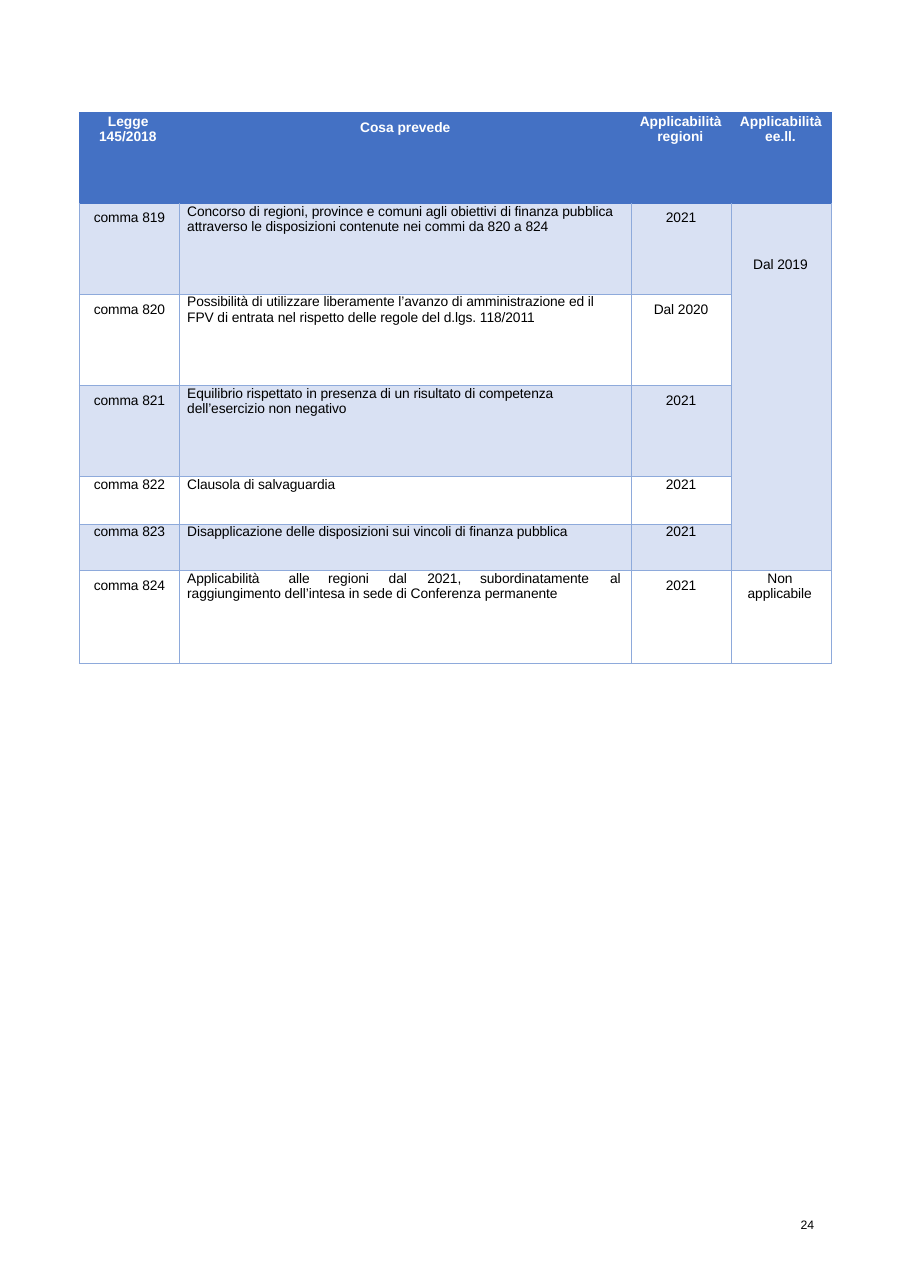
"""Build the page with the table on the applicability of Law 145/2018."""
import pptx
import pptx.dml.color
import pptx.enum.text
import pptx.oxml
import pptx.oxml.ns
import pptx.util
from lxml import etree

Inches = pptx.util.Inches
Pt = pptx.util.Pt
RGBColor = pptx.dml.color.RGBColor
ALIGN = pptx.enum.text.PP_ALIGN
qn = pptx.oxml.ns.qn

BLUE = RGBColor(0x44, 0x71, 0xC4)
PALE = RGBColor(0xD9, 0xE1, 0xF3)
RULE = RGBColor(0x8E, 0xAA, 0xDB)
WHITE = RGBColor(255, 255, 255)
BLACK = RGBColor(0, 0, 0)

COLS = [0.91, 4.1, 0.91, 0.91]
ROW_HEIGHTS = [0.83, 0.82, 0.83, 0.83, 0.43, 0.42, 0.84]
TABS = [0.92, 1.28, 1.83, 2.18, 2.66, 3.84]
HEADERS = [
    ("Legge 145/2018", 0.01, (0.18, 0.08)),
    ("Cosa prevede", 0.07, None),
    ("Applicabilità regioni", 0.01, (0.24, -0.16)),
    ("Applicabilità ee.ll.", 0.01, (0.31, -0.23)),
]
COMMI = [
    ("comma 819", "Concorso di regioni, province e comuni agli obiettivi di finanza pubblica "
     "attraverso le disposizioni contenute nei commi da 820 a 824", "2021", 0.06),
    ("comma 820", "Possibilità di utilizzare liberamente l’avanzo di amministrazione ed il\n"
     "FPV di entrata nel rispetto delle regole del d.lgs. 118/2011", "Dal 2020", 0.07),
    ("comma 821", "Equilibrio rispettato in presenza di un risultato di competenza\n"
     "dell’esercizio non negativo", "2021", 0.07),
    ("comma 822", "Clausola di salvaguardia", "2021", 0),
    ("comma 823", "Disapplicazione delle disposizioni sui vincoli di finanza pubblica", "2021", 0),
    ("comma 824", "Applicabilità\talle\tregioni\tdal\t2021,\tsubordinatamente\tal\n"
     "raggiungimento dell’intesa in sede di Conferenza permanente", "2021", 0.07),
]


class Page:
    def __init__(self, slide, font):
        self.slide = slide
        self.font = font

    def format(self, p, size, color, bold=False, indent=None, spacing=0):
        pPr = p._p.get_or_add_pPr()
        if "\t" in p.text:
            tabs = etree.SubElement(pPr, qn("a:tabLst"))
            for x in TABS:
                etree.SubElement(tabs, qn("a:tab"), pos=str(Inches(x)), algn="l")
        if indent:
            left, first = indent
            p.alignment = ALIGN.LEFT
            p.line_spacing = Pt(10.2)
            pPr.set("marL", str(Inches(left)))
            if first:
                pPr.set("indent", str(Inches(first)))
        else:
            p.alignment = ALIGN.CENTER
        for r in p.runs:
            r.font.name = self.font
            r.font.size = Pt(size)
            r.font.bold = bold
            r.font.color.rgb = color
            r._r.get_or_add_rPr().set("spc", str(spacing))

    def table(self, left, top, cols, heights):
        s = self.slide.shapes.add_table(len(heights), len(cols), Inches(left), Inches(top),
                                        Inches(sum(cols)), Inches(sum(heights)))
        for col, width in zip(s.table.columns, cols):
            col.width = Inches(width)
        for row, height in zip(s.table.rows, heights):
            row.height = Inches(height)
        return s.table

    def paint(self, cell, fill, line, top_line):
        tcPr = cell._tc.get_or_add_tcPr()
        for side, color in zip("LRTB", (line, line, top_line, line)):
            ln = etree.SubElement(tcPr, qn("a:ln" + side), w=str(Pt(0.5)))
            solid = etree.SubElement(ln, qn("a:solidFill"))
            etree.SubElement(solid, qn("a:srgbClr"), val=str(color))
        cell.fill.solid()
        cell.fill.fore_color.rgb = fill

    def cell(self, cell, text, inset, indent=None, color=BLACK, bold=False):
        cell.margin_left = cell.margin_right = cell.margin_bottom = 0
        cell.margin_top = Inches(inset)
        cell.text_frame.text = text
        for p in cell.text_frame.paragraphs:
            self.format(p, 9, color, bold, indent, 0 if bold else -5)

    def label(self, text, left, top, width, height):
        s = self.slide.shapes.add_textbox(Inches(left), Inches(top), Inches(width), Inches(height))
        tf = s.text_frame
        tf.margin_left = tf.margin_right = tf.margin_top = tf.margin_bottom = 0
        tf.word_wrap = True
        tf.text = text
        self.format(tf.paragraphs[0], 8, BLACK, indent=(0.04, 0))


def main():
    prs = pptx.Presentation()
    prs.slide_width, prs.slide_height = Pt(595), Pt(842)
    page = Page(prs.slides.add_slide(prs.slide_layouts[6]), "Arial")

    table = page.table(0.72, 1.02, COLS, ROW_HEIGHTS)
    last = len(COMMI)
    for i in range(last + 1):
        for j in range(len(COLS)):
            shaded = i % 2 == 1 or (j == 3 and i < last)
            fill = BLUE if i == 0 else PALE if shaded else WHITE
            page.paint(table.cell(i, j), fill, RULE if i else BLUE, RULE if i > 1 else BLUE)
    table.cell(1, 3).merge(table.cell(last - 1, 3))

    for j, (text, inset, indent) in enumerate(HEADERS):
        page.cell(table.cell(0, j), text, inset, indent, WHITE, True)
    for i, (comma, content, regions, inset) in enumerate(COMMI, 1):
        page.cell(table.cell(i, 0), comma, inset)
        page.cell(table.cell(i, 1), content, 0, (0.07, 0))
        page.cell(table.cell(i, 2), regions, inset)
    page.cell(table.cell(1, 3), "Dal 2019", 0.48, (0.2, 0))
    page.cell(table.cell(last, 3), "Non applicabile", 0, (0.15, 0.18))

    page.label("24", 7.23, 11.04, 0.21, 0.15)
    prs.save("out.pptx")


if __name__ == "__main__":
    main()
